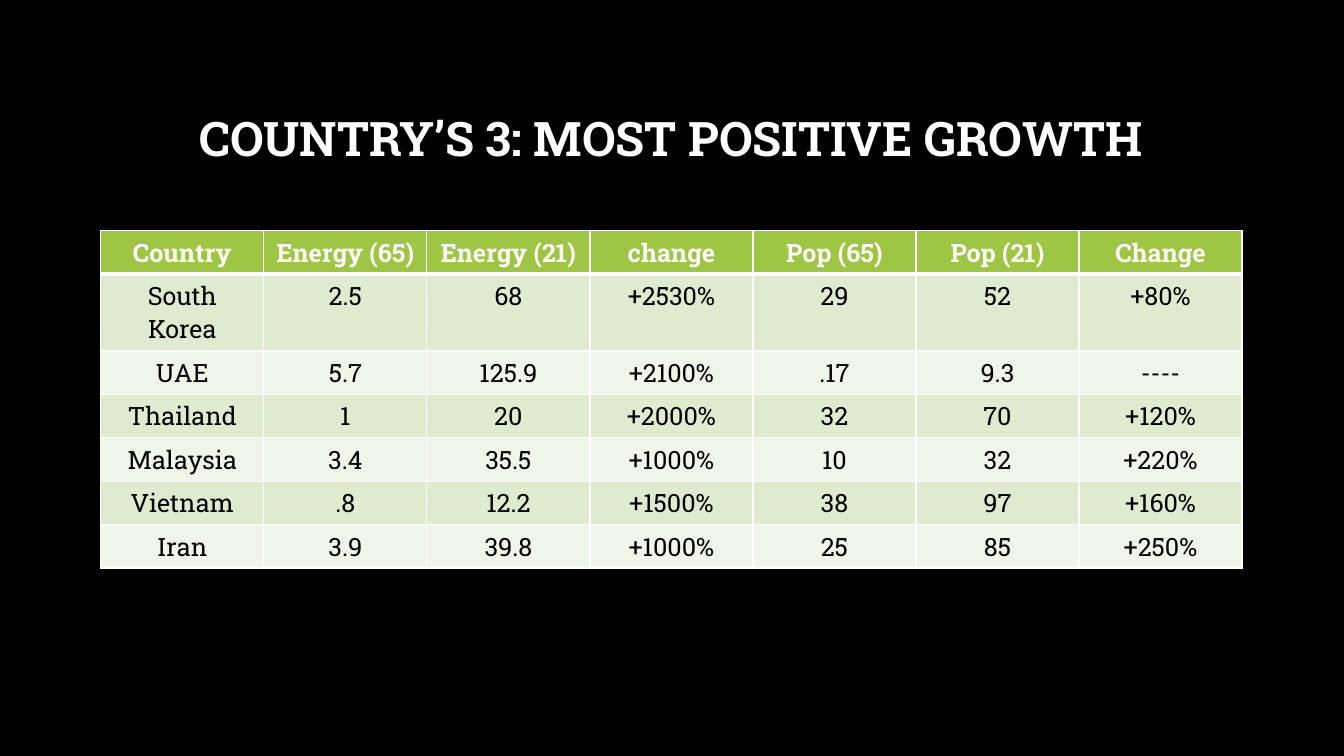
"""Builds a slide with a table of energy and population growth by country."""
from dataclasses import dataclass

from lxml import etree
from pptx import Presentation
from pptx.dml.color import RGBColor
from pptx.enum.text import MSO_ANCHOR, MSO_AUTO_SIZE, PP_ALIGN
from pptx.oxml.ns import qn
from pptx.util import Inches, Pt

CENTER = PP_ALIGN.CENTER
MIDDLE = MSO_ANCHOR.MIDDLE
NO_AUTOFIT = MSO_AUTO_SIZE.NONE
TITLE_ONLY = 5


@dataclass(frozen=True)
class Theme:
    font: str = "Roboto Slab"
    background: str = "000000"
    light: str = "FFFFFF"
    dark: str = "000000"
    header: str = "9EC544"
    bands: tuple = ("DFEACF", "F0F5E9")
    title_size: int = 34
    table_size: int = 18
    thin_border: int = 1
    thick_border: int = 3


TITLE = "COUNTRY’S 3: MOST POSITIVE GROWTH"
GROWTH = [
    ["Country", "Energy (65)", "Energy (21)", "change", "Pop (65)", "Pop (21)", "Change"],
    ["South Korea", "2.5", "68", "+2530%", "29", "52", "+80%"],
    ["UAE", "5.7", "125.9", "+2100%", ".17", "9.3", "----"],
    ["Thailand", "1", "20", "+2000%", "32", "70", "+120%"],
    ["Malaysia", "3.4", "35.5", "+1000%", "10", "32", "+220%"],
    ["Vietnam", ".8", "12.2", "+1500%", "38", "97", "+160%"],
    ["Iran", "3.9", "39.8", "+1000%", "25", "85", "+250%"],
]


def set_attributes(target, values):
    for name, value in values.items():
        setattr(target, name, value)


class SlideBuilder:
    def __init__(self, slide, theme):
        self.slide = slide
        self.theme = theme

    def background(self):
        fill = self.slide.background.fill
        fill.solid()
        fill.fore_color.rgb = RGBColor.from_string(self.theme.background)

    def add_text(self, text_frame, text, size, color, bold):
        paragraph = text_frame.paragraphs[0]
        paragraph.alignment = CENTER
        run = paragraph.add_run()
        run.text = text
        set_attributes(run.font, {"name": self.theme.font, "size": Pt(size), "bold": bold})
        run.font.color.rgb = RGBColor.from_string(color)
        return paragraph

    def title(self, text, left, top, width, height):
        shape = self.slide.shapes.title
        set_attributes(shape, {"left": Inches(left), "top": Inches(top),
                               "width": Inches(width), "height": Inches(height)})
        set_attributes(shape.text_frame, {"word_wrap": True, "auto_size": NO_AUTOFIT,
                                          "vertical_anchor": MIDDLE})
        paragraph = self.add_text(shape.text_frame, text, self.theme.title_size,
                                  self.theme.light, True)
        paragraph.line_spacing = 0.9

    def borders(self, cell, widths):
        properties = cell._tc.get_or_add_tcPr()
        for side, width in widths.items():
            line = etree.SubElement(properties, qn(f"a:ln{side}"), w=str(Pt(width)))
            fill = etree.SubElement(line, qn("a:solidFill"))
            etree.SubElement(fill, qn("a:srgbClr"), val=self.theme.light)

    def cell(self, cell, text, row):
        theme = self.theme
        is_header = row == 0
        widths = dict.fromkeys("LRTB", theme.thin_border)
        if row < 2:
            widths["B" if is_header else "T"] = theme.thick_border
        self.borders(cell, widths)
        cell.fill.solid()
        color = theme.header if is_header else theme.bands[(row - 1) % 2]
        cell.fill.fore_color.rgb = RGBColor.from_string(color)
        self.add_text(cell.text_frame, text, theme.table_size,
                      theme.light if is_header else theme.dark, is_header)

    def table(self, rows, left, top, width, row_height):
        frame = self.slide.shapes.add_table(
            len(rows), len(rows[0]), Inches(left), Inches(top),
            Inches(width), Inches(row_height * len(rows)))
        for row, texts in enumerate(rows):
            for column, text in enumerate(texts):
                self.cell(frame.table.cell(row, column), text, row)


def main():
    presentation = Presentation()
    set_attributes(presentation, {"slide_width": Inches(13.33), "slide_height": Inches(7.5)})
    slide = presentation.slides.add_slide(presentation.slide_layouts[TITLE_ONLY])
    builder = SlideBuilder(slide, Theme())
    builder.background()
    builder.title(TITLE, 1, 0.67, 11.32, 1.45)
    builder.table(GROWTH, 1, 2.29, 11.32, 0.41)
    presentation.save("out.pptx")


if __name__ == "__main__":
    main()
